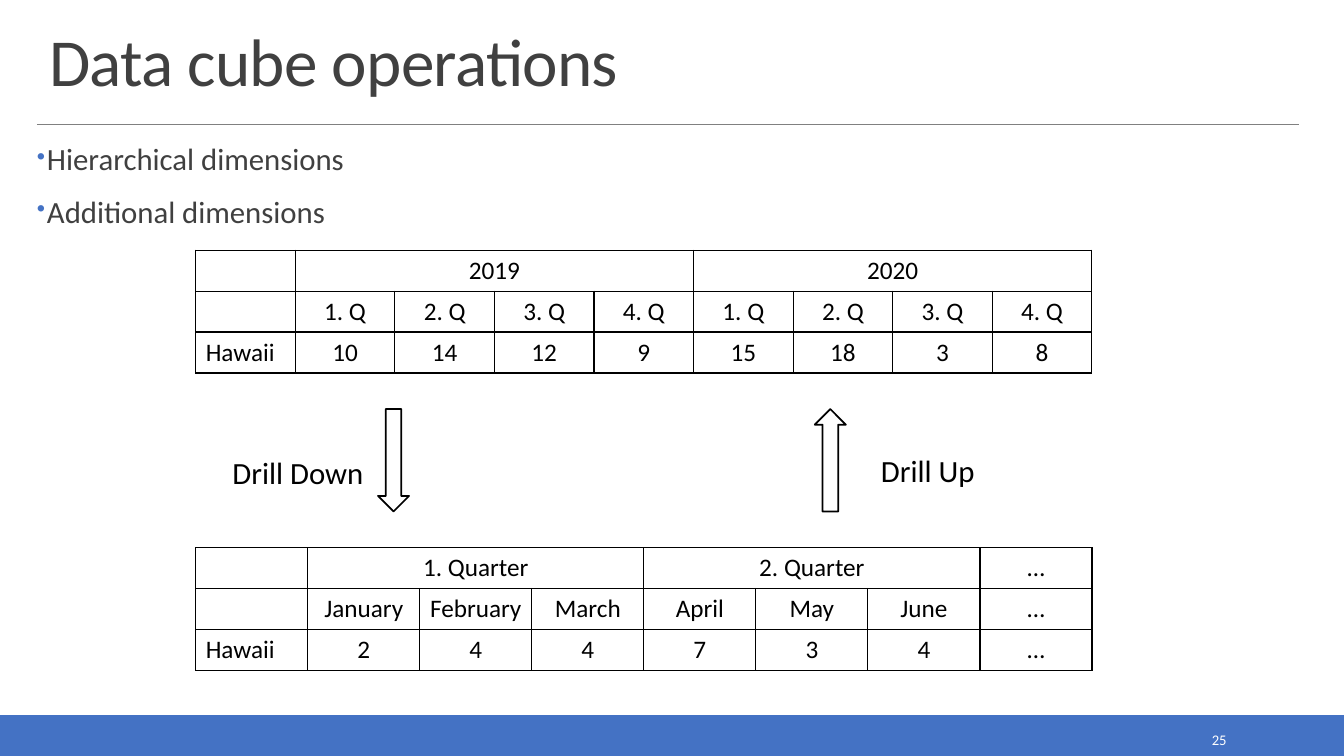
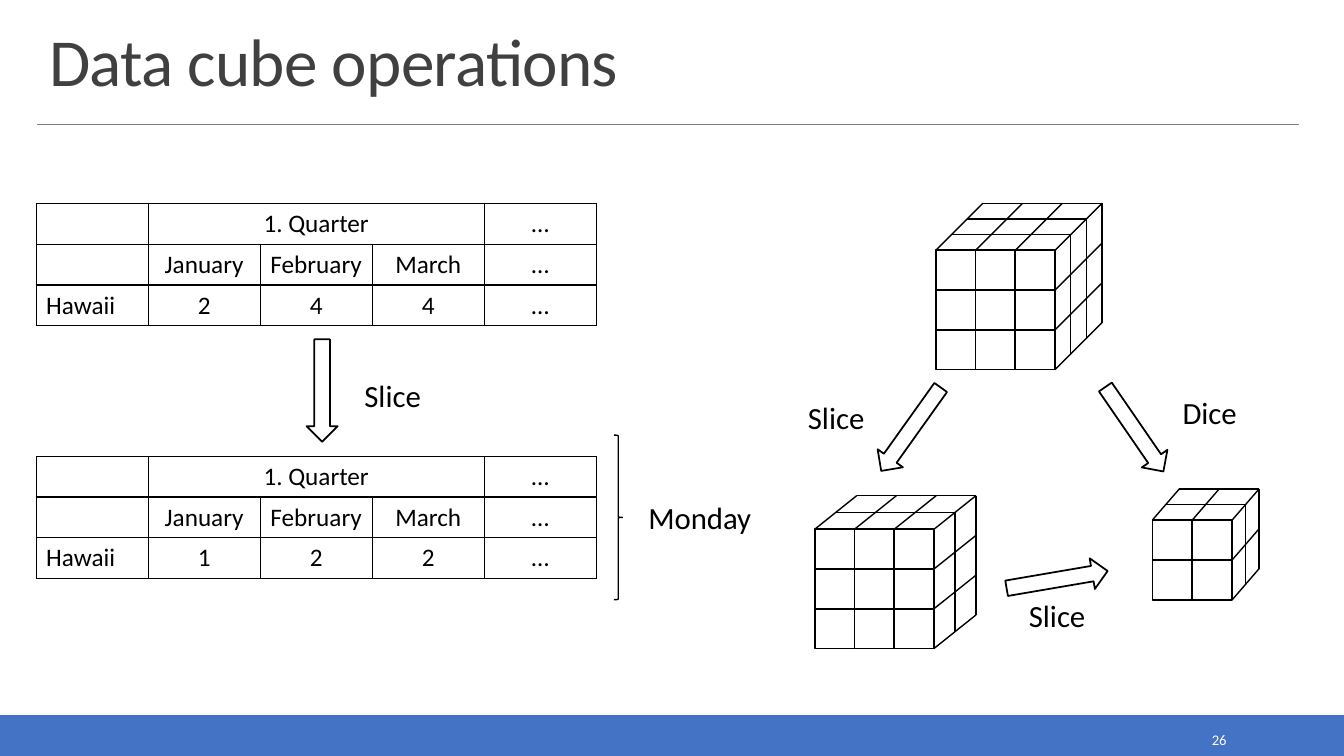
from dataclasses import dataclass

from lxml.etree import SubElement
from pptx import Presentation
from pptx.dml.color import RGBColor
from pptx.enum.shapes import MSO_CONNECTOR, MSO_SHAPE
from pptx.enum.text import MSO_ANCHOR, PP_ALIGN
from pptx.oxml import parse_xml
from pptx.oxml.ns import nsdecls, qn
from pptx.util import Inches, Pt

COLUMNS, ROWS = 160, 90
UNIT = Inches(1) / 12
COLORS = {
    "accent": "4472C4",
    "heading": "404040",
    "rule": "808080",
    "ink": "000000",
    "paper": "FFFFFF",
}
FONTS = {
    "title": {"size": Pt(48), "color": "heading"},
    "body": {"size": Pt(22), "color": "heading"},
    "label": {"size": Pt(22), "color": "ink"},
    "cell": {"size": Pt(18), "color": "ink"},
    "number": {"size": Pt(10.5), "color": "paper"},
}
PARAGRAPHS = {
    "title": {"line_spacing": 0.85},
    "body": {"line_spacing": 0.9, "space_before": Pt(12), "space_after": Pt(2)},
    "number": {"alignment": PP_ALIGN.RIGHT},
}
FRAMES = {
    "title": {"vertical_anchor": MSO_ANCHOR.BOTTOM},
    "body": {"margin_left": 0, "margin_right": 0,
             "margin_top": Inches(0.04), "margin_bottom": Inches(0.04)},
    "number": {"vertical_anchor": MSO_ANCHOR.MIDDLE},
}
ARROW_SIZE = (3.7, 12.2)
TABLE_ROWS = 14.6
LABEL_ROWS = 5.6


@dataclass
class Box:
    """Hold a rectangle in grid columns and rows."""

    left: float
    top: float
    width: float
    height: float

    def inner(self, column, row, width, height):
        """Return a box offset from this box's top left corner."""
        return Box(self.left + column, self.top + row, width, height)

    def lengths(self):
        """Return the four lengths in slide units."""
        return [to_length(value) for value in (self.left, self.top, self.width, self.height)]


def to_length(value):
    """Turn grid units into a slide length."""
    return round(value * UNIT)


def color(name):
    """Look up a palette colour."""
    return RGBColor.from_string(COLORS[name])


def apply(target, values):
    """Set each attribute in a dict of format values."""
    for name, value in values.items():
        setattr(target, name, value)


def write(paragraph, text, style):
    """Write one styled run into a paragraph."""
    run = paragraph.add_run()
    run.text = text
    apply(run.font, {"name": "Calibri", "size": FONTS[style]["size"]})
    run.font.color.rgb = color(FONTS[style]["color"])
    apply(paragraph, PARAGRAPHS.get(style, {}))


def add_text(slide, box, lines, style):
    """Add a text box with one paragraph a line."""
    frame = slide.shapes.add_textbox(*box.lengths()).text_frame
    apply(frame, {"word_wrap": True, **FRAMES.get(style, {})})
    for index, line in enumerate(lines):
        paragraph = frame.add_paragraph() if index else frame.paragraphs[0]
        write(paragraph, line, style)
    return frame


def add_label(slide, box, column, row, width, text):
    """Add a one-line label inside a region."""
    add_text(slide, box.inner(column, row, width, LABEL_ROWS), [text], "label")


def add_preset(shapes, kind, box, fill="paper", line="ink", weight=1.25, rotation=0):
    """Add a preset shape; fill None leaves it open."""
    shape = shapes.add_shape(kind, *box.lengths())
    shape.shadow.inherit = False
    if fill:
        shape.fill.solid()
        shape.fill.fore_color.rgb = color(fill)
    else:
        shape.fill.background()
    shape.line.color.rgb = color(line)
    shape.line.width = Pt(weight)
    shape.rotation = rotation


def add_line(shapes, start, end, line="ink", weight=1):
    """Add a straight line between two grid points."""
    points = [to_length(value) for value in (*start, *end)]
    connector = shapes.add_connector(MSO_CONNECTOR.STRAIGHT, *points)
    connector.line.color.rgb = color(line)
    connector.line.width = Pt(weight)
    SubElement(connector._element.spPr, qn("a:effectLst"))


def add_arrow(slide, box, column, row, rotation=0):
    """Add a block arrow, pointing down before its rotation."""
    add_preset(slide.shapes, MSO_SHAPE.DOWN_ARROW,
               box.inner(column, row, *ARROW_SIZE), rotation=rotation)


def add_bullets(slide, box, lines):
    """Add a bulleted list."""
    for paragraph in add_text(slide, box, lines, "body").paragraphs:
        properties = paragraph._p.get_or_add_pPr()
        properties.set("marL", str(Inches(0.1)))
        properties.set("indent", str(-Inches(0.1)))
        bullet_color = SubElement(properties, qn("a:buClr"))
        SubElement(bullet_color, qn("a:srgbClr"), val=COLORS["accent"])
        SubElement(properties, qn("a:buSzPct"), val="80000")
        SubElement(properties, qn("a:buChar"), char="•")


def outline_cell(cell):
    """Clear a cell's fill and draw its four borders."""
    cell.fill.background()
    properties = cell._tc.get_or_add_tcPr()
    for index, side in enumerate("LRTB"):
        properties.insert(index, parse_xml(
            f'<a:ln{side} {nsdecls("a")} w="{Pt(1)}"><a:solidFill>'
            f'<a:srgbClr val="{COLORS["ink"]}"/></a:solidFill></a:ln{side}>'))


def add_data_table(slide, box, groups, names, values):
    """Add a table of grouped headings, names and one row for Hawaii."""
    heading = [""]
    spans = []
    for text, span in groups:
        spans.append((len(heading), span))
        heading += [text] + [""] * (span - 1)
    rows = [heading, ["", *names], ["Hawaii", *values]]
    table = slide.shapes.add_table(len(rows), len(heading), *box.lengths()).table
    apply(table, {"first_row": False, "horz_banding": False})
    for column in table.columns:
        column.width = to_length(box.width / len(heading))
    for row_index, row in enumerate(rows):
        for column_index, text in enumerate(row):
            cell = table.cell(row_index, column_index)
            outline_cell(cell)
            if text:
                paragraph = cell.text_frame.paragraphs[0]
                write(paragraph, text, "cell")
                paragraph.alignment = PP_ALIGN.CENTER if column_index else PP_ALIGN.LEFT
    for start, span in spans:
        if span > 1:
            table.cell(0, start).merge(table.cell(0, start + span - 1))


def add_cube(slide, box, count, layers, shift, rise):
    """Draw a grid cube whose front fills the box and whose depth runs up and right."""
    shapes = slide.shapes.add_group_shape().shapes
    step = box.width / count
    right = box.left + box.width
    bottom = box.top + box.height
    for row in range(count):
        for column in range(count):
            add_preset(shapes, MSO_SHAPE.RECTANGLE,
                       box.inner(column * step, row * step, step, step))
    corners = [(box.left + index * step, box.top) for index in range(count + 1)]
    corners += [(right, box.top + index * step) for index in range(1, count + 1)]
    for column, row in corners:
        add_line(shapes, (column, row), (column + shift, row - rise))
    for layer in range(1, layers + 1):
        across, up = shift * layer / layers, rise * layer / layers
        corner = (right + across, box.top - up)
        add_line(shapes, (box.left + across, box.top - up), corner)
        add_line(shapes, corner, (right + across, bottom - up))


def add_frame(presentation, number):
    """Add a slide with the shared title, rule, band and number."""
    slide = presentation.slides.add_slide(presentation.slide_layouts[6])
    add_preset(slide.shapes, MSO_SHAPE.RECTANGLE, Box(0, 85.2, COLUMNS, 4.8), "accent", "accent")
    add_line(slide.shapes, (4.4, 14.8), (154.7, 14.8), "rule", 0.5)
    title = add_text(slide, Box(4.7, 2.4, 150.2, 10.1), ["Data cube operations"], "title")
    title.paragraphs[0].runs[0]._r.get_or_add_rPr().set("spc", "-50")
    add_text(slide, Box(130, 86.3, 17.2, 3.4), [str(number)], "number")
    return slide


def add_drilling(slide, box):
    """Show drilling between quarters and months."""
    add_data_table(slide, box.inner(0, 0, box.width, TABLE_ROWS),
                   [("2019", 4), ("2020", 4)],
                   [f"{quarter}. Q" for quarter in (1, 2, 3, 4)] * 2,
                   ["10", "14", "12", "9", "15", "18", "3", "8"])
    add_data_table(slide, box.inner(0, 35.4, box.width, TABLE_ROWS),
                   [("1. Quarter", 3), ("2. Quarter", 3), ("…", 1)],
                   ["January", "February", "March", "April", "May", "June", "…"],
                   ["2", "4", "4", "7", "3", "4", "…"])
    add_arrow(slide, box, 21.7, 18.9)
    add_arrow(slide, box, 73.7, 18.9, 180)
    add_label(slide, box, 80.4, 23.4, 20.8, "Drill Up")
    add_label(slide, box, 3.2, 23.6, 18.5, "Drill Down")


def add_table_slicing(slide, box):
    """Show a slice for one weekday as two tables."""
    for row, values in ((0, ["2", "4", "4", "…"]), (30.1, ["1", "2", "2", "…"])):
        add_data_table(slide, box.inner(0, row, 66.7, TABLE_ROWS),
                       [("1. Quarter", 3), ("…", 1)],
                       ["January", "February", "March", "…"], values)
    add_arrow(slide, box, 32.2, 16.2)
    add_label(slide, box, 37.9, 20, 10.4, "Slice")
    add_preset(slide.shapes, MSO_SHAPE.RIGHT_BRACE, box.inner(68.8, 27.6, 1, 19.6),
               fill=None, weight=1)
    add_label(slide, box, 71.7, 34.6, 15.4, "Monday")


def add_cube_operations(slide, box):
    """Show slicing and dicing on three cubes."""
    for column, row, size, count, layers, shift, rise in (
            (16.4, 5.6, 14.2, 3, 3, 5.6, 5.6),
            (42.2, 37.7, 9.5, 2, 2, 3.2, 3.7),
            (2, 38.8, 14.2, 3, 2, 5, 4)):
        add_cube(slide, box.inner(column, row, size, size), count, layers, shift, rise)
    for column, row, rotation in ((11.6, 20.8, 35.5), (38.2, 20.8, 325.5), (29, 38.7, 260.3)):
        add_arrow(slide, box, column, row, rotation)
    for column, row, text in ((0, 22.7, "Slice"), (44.6, 22.1, "Dice"), (26.3, 46.2, "Slice")):
        add_label(slide, box, column, row, 10.4, text)


def main():
    """Build and save the presentation."""
    presentation = Presentation()
    apply(presentation, {"slide_width": to_length(COLUMNS), "slide_height": to_length(ROWS)})
    drill_slide = add_frame(presentation, 25)
    add_bullets(drill_slide, Box(4.4, 16.7, 150.2, 11.2),
                ["Hierarchical dimensions", "Additional dimensions"])
    add_drilling(drill_slide, Box(23.3, 29.8, 106.7, 50))
    slice_slide = add_frame(presentation, 26)
    add_table_slicing(slice_slide, Box(4.3, 24.2, 87.1, 47.2))
    add_cube_operations(slice_slide, Box(95, 24.2, 55, 53))
    presentation.save("out.pptx")


if __name__ == "__main__":
    main()
